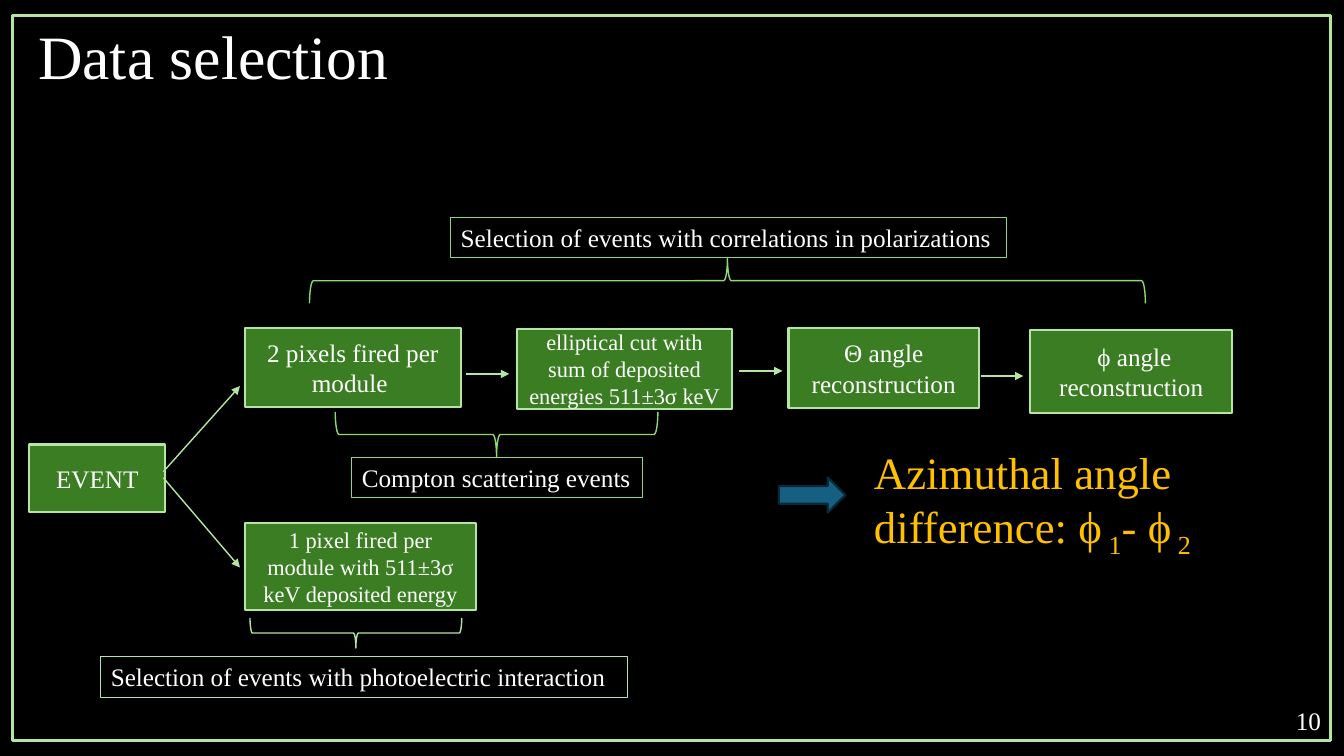
from dataclasses import dataclass
from typing import NamedTuple

from lxml import etree
from pptx import Presentation
from pptx.dml import color
from pptx.enum import shapes, text
from pptx.oxml import ns
from pptx.util import Inches, Pt

SHAPE = shapes.MSO_SHAPE
ALIGN = text.PP_ALIGN
ANCHOR = text.MSO_ANCHOR


@dataclass(frozen=True)
class Theme:
    font: str = "Times New Roman"
    background: str = "000000"
    white: str = "FFFFFF"
    gold: str = "FFC000"
    step: str = "3B7D23"
    pale: str = "B4E5A2"
    bright: str = "8ED973"
    arrow: str = "156082"
    arrow_edge: str = "092A39"
    title: int = 44
    result: int = 32
    body: int = 18
    small: int = 16


THEME = Theme()


class Area(NamedTuple):
    left: float
    top: float
    width: float
    height: float


class Span(NamedTuple):
    words: str
    baseline: int = 0


@dataclass(frozen=True)
class Step:
    area: Area
    words: str
    size: int = THEME.body


@dataclass(frozen=True)
class Caption:
    area: Area
    words: str
    edge: str = THEME.bright


@dataclass(frozen=True)
class Brace:
    area: Area
    rotation: int
    edge: str = THEME.bright


class Arrow(NamedTuple):
    start_x: float
    start_y: float
    end_x: float
    end_y: float


FRAME = Area(0.12, 0.15, 13.08, 7.2)
STEPS = [
    Step(Area(0.29, 4.41, 1.35, 0.67), "EVENT"),
    Step(Area(2.43, 3.25, 2.14, 0.79), "2 pixels fired per module "),
    Step(Area(2.43, 5.19, 2.29, 0.86),
         "1 pixel fired per module with 511±3σ keV deposited energy", THEME.small),
    Step(Area(5.13, 3.26, 2.13, 0.8),
         "elliptical cut with sum of deposited energies 511±3σ keV", THEME.small),
    Step(Area(7.82, 3.25, 1.89, 0.8), "Θ angle reconstruction"),
    Step(Area(10.22, 3.27, 2, 0.83), " ϕ angle reconstruction"),
]
CAPTIONS = [
    Caption(Area(4.47, 2.16, 5.51, 0.4),
            "Selection of events with correlations in polarizations"),
    Caption(Area(3.49, 4.54, 2.88, 0.4), "Compton scattering events"),
    Caption(Area(1, 6.51, 5.22, 0.41),
            "Selection of events with photoelectric interaction", THEME.pale),
]
BRACES = [
    Brace(Area(6.99, -1.36, 0.45, 8.29), 90),
    Brace(Area(4.7, 2.71, 0.45, 3.2), 270),
    Brace(Area(3.38, 5.23, 0.3, 2.1), 270, THEME.pale),
]
ARROWS = [
    Arrow(1.62, 4.68, 2.38, 3.83),
    Arrow(1.62, 4.74, 2.38, 5.63),
    Arrow(4.62, 3.71, 5.05, 3.71),
    Arrow(7.33, 3.68, 7.76, 3.68),
    Arrow(9.73, 3.73, 10.15, 3.73),
]
RESULT = [
    Span("Azimuthal angle difference: ϕ"),
    Span(" 1", -25000),
    Span("- ϕ"),
    Span(" 2", -25000),
]


def rgb(code: str) -> color.RGBColor:
    return color.RGBColor.from_string(code)


def write(box, spans: list[Span], size: int, ink: str = THEME.white,
          align=ALIGN.LEFT, anchor=ANCHOR.TOP):
    frame = box.text_frame
    frame.word_wrap = True
    frame.vertical_anchor = anchor
    para = frame.paragraphs[0]
    para.alignment = align
    for span in spans:
        run = para.add_run()
        run.text = span.words
        run.font.name = THEME.font
        run.font.size = Pt(size)
        run.font.color.rgb = rgb(ink)
        if span.baseline:
            run.font._element.set("baseline", str(span.baseline))
    return para


def add_text(page, area: Area, spans: list[Span], size: int, **style):
    box = page.shapes.add_textbox(*map(Inches, area))
    return write(box, spans, size, **style)


def add_figure(page, kind, area: Area, edge: str, weight: float,
               fill: str | None = None, rotation: int = 0):
    figure = page.shapes.add_shape(kind, *map(Inches, area))
    figure.shadow.inherit = False
    figure.rotation = rotation
    figure.line.color.rgb = rgb(edge)
    figure.line.width = Pt(weight)
    if fill is None:
        figure.fill.background()
    else:
        figure.fill.solid()
        figure.fill.fore_color.rgb = rgb(fill)
    return figure


def add_step(page, step: Step) -> None:
    box = add_figure(page, SHAPE.FLOWCHART_PROCESS, step.area, THEME.pale, 1.5, THEME.step)
    write(box, [Span(step.words)], step.size, align=ALIGN.CENTER, anchor=ANCHOR.MIDDLE)


def add_caption(page, caption: Caption) -> None:
    box = add_figure(page, SHAPE.RECTANGLE, caption.area, caption.edge, 0.75)
    write(box, [Span(caption.words)], THEME.body)


def add_arrow(page, arrow: Arrow) -> None:
    connector = page.shapes.add_connector(
        shapes.MSO_CONNECTOR.STRAIGHT, *map(Inches, arrow))
    connector.line.color.rgb = rgb(THEME.pale)
    connector.line.width = Pt(1)
    outline = connector.line._get_or_add_ln()
    etree.SubElement(outline, ns.qn("a:tailEnd"), type="triangle")
    etree.SubElement(connector._element.spPr, ns.qn("a:effectLst"))


def main() -> None:
    deck = Presentation()
    deck.slide_width, deck.slide_height = Inches(13.33), Inches(7.5)
    page = deck.slides.add_slide(deck.slide_layouts[6])
    page.background.fill.solid()
    page.background.fill.fore_color.rgb = rgb(THEME.background)

    add_figure(page, SHAPE.RECTANGLE, FRAME, THEME.pale, 2.25)
    title = add_text(page, Area(0.28, 0.14, 3.81, 0.9), [Span("Data selection")],
                     THEME.title, anchor=ANCHOR.MIDDLE)
    title.line_spacing = 0.9
    add_text(page, Area(10.27, 6.95, 2.93, 0.4), [Span("10")], THEME.body,
             align=ALIGN.RIGHT, anchor=ANCHOR.MIDDLE)

    for step in STEPS:
        add_step(page, step)
    for arrow in ARROWS:
        add_arrow(page, arrow)
    for brace in BRACES:
        add_figure(page, SHAPE.LEFT_BRACE, brace.area, brace.edge, 1,
                   rotation=brace.rotation)
    for caption in CAPTIONS:
        add_caption(page, caption)

    add_figure(page, SHAPE.DOWN_ARROW, Area(7.88, 4.58, 0.35, 0.66),
               THEME.arrow_edge, 1.5, THEME.arrow, 270)
    add_text(page, Area(8.57, 4.36, 4.4, 1.18), RESULT, THEME.result, ink=THEME.gold)
    deck.save("out.pptx")


if __name__ == "__main__":
    main()
